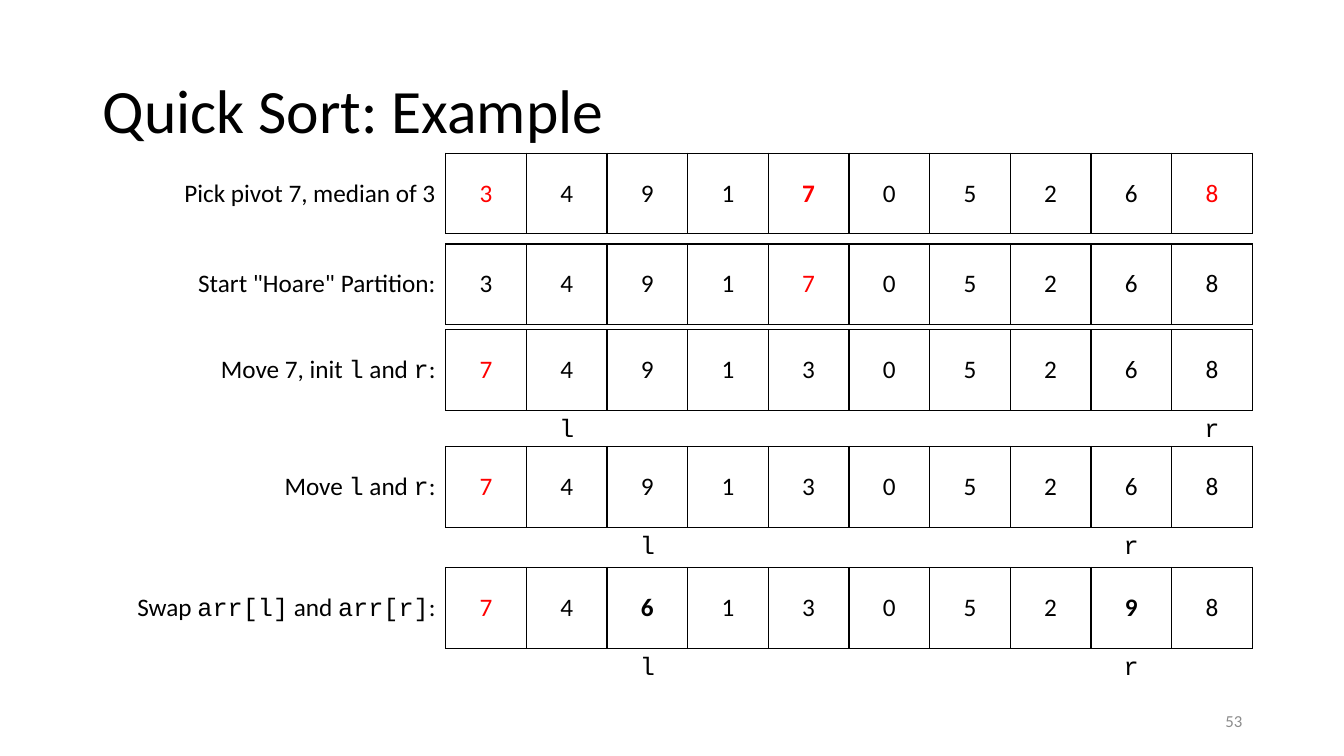
from lxml import etree
from pptx import Presentation
from pptx import util as u
from pptx.dml.color import RGBColor
from pptx.enum import text
from pptx.oxml.ns import qn

BLACK = RGBColor(0, 0, 0)
RED = RGBColor(0xFF, 0, 0)
GRAY = RGBColor(0x8C, 0x8C, 0x8C)
BODY, CODE = "Calibri", "Courier New"

CELL = 0.8
MARKER_HEIGHT = CELL / 2
RIGHT_EDGE = 12.42

# Top, label width, label (code in backticks), values, red and bold columns, markers
STEPS = [
    (1.52, 3, "Pick pivot 7, median of 3", "3491705268", {0, 4, 9}, {4}, {}),
    (2.42, 3, 'Start "Hoare" Partition:', "3491705268", {4}, set(), {}),
    (3.27, 3, "Move 7, init `l` and `r`:", "7491305268", {0}, set(), {1: "l", 9: "r"}),
    (4.43, 3, "Move `l` and `r`:", "7491305268", {0}, set(), {2: "l", 8: "r"}),
    (5.63, 3.2, "Swap `arr[l]` and `arr[r]`:", "7461305298", {0}, {2, 8}, {2: "l", 8: "r"}),
]


def style_cell(cell, black_sides):
    """Draw the named sides (L, R, T, B) in black and clear the others and the fill."""
    properties = cell._tc.get_or_add_tcPr()
    for side in "LRTB":
        line = etree.SubElement(properties, qn(f"a:ln{side}"), w=str(u.Pt(1)))
        if side in black_sides:
            fill = etree.SubElement(line, qn("a:solidFill"))
            etree.SubElement(fill, qn("a:srgbClr"), val=str(BLACK))
        else:
            etree.SubElement(line, qn("a:noFill"))
    cell.fill.background()
    cell.vertical_anchor = text.MSO_ANCHOR.MIDDLE


def write(paragraph, content, alignment, size=18, color=BLACK, bold=False, font=BODY):
    """Fill a paragraph, setting the parts between backticks in the code font."""
    paragraph.alignment = alignment
    paragraph.font.size = u.Pt(size)
    for index, part in enumerate(content.split("`")):
        run = paragraph.add_run()
        run.text = part
        run.font.name = CODE if index % 2 else font
        run.font.size = u.Pt(size)
        run.font.color.rgb = color
        run.font.bold = bold


presentation = Presentation()
presentation.slide_width, presentation.slide_height = u.Inches(13.33), u.Inches(7.5)
slide = presentation.slides.add_slide(presentation.slide_layouts[5])

# Title
title = slide.shapes.title
title.left, title.top = u.Inches(0.92), u.Inches(0.4)
title.width, title.height = u.Inches(11.5), u.Inches(1.45)
title.text_frame.vertical_anchor = text.MSO_ANCHOR.MIDDLE
title.text_frame.paragraphs[0].line_spacing = 0.9
write(title.text_frame.paragraphs[0], "Quick Sort: Example", text.PP_ALIGN.LEFT, size=44)

# One array table per step, with a marker row beneath the values
for top, label_width, label, values, red, bold, markers in STEPS:
    width = label_width + CELL * len(values)
    frame = slide.shapes.add_table(
        2, len(values) + 1, u.Inches(RIGHT_EDGE - width), u.Inches(top),
        u.Inches(width), u.Inches(CELL + MARKER_HEIGHT))
    table = frame.table
    table.first_row = table.horz_banding = False
    table.rows[0].height = u.Inches(CELL)
    table.rows[1].height = u.Inches(MARKER_HEIGHT)
    table.columns[0].width = u.Inches(label_width)

    label_cell = table.cell(0, 0)
    style_cell(label_cell, "R")
    style_cell(table.cell(1, 0), "")
    write(label_cell.text_frame.paragraphs[0], label, text.PP_ALIGN.RIGHT)

    for index, value in enumerate(values):
        table.columns[index + 1].width = u.Inches(CELL)
        value_cell, marker_cell = table.cell(0, index + 1), table.cell(1, index + 1)
        style_cell(value_cell, "LRTB")
        style_cell(marker_cell, "T")
        write(value_cell.text_frame.paragraphs[0], value, text.PP_ALIGN.CENTER,
              color=RED if index in red else BLACK, bold=index in bold)
        if index in markers:
            write(marker_cell.text_frame.paragraphs[0], markers[index],
                  text.PP_ALIGN.CENTER, font=CODE)

# Slide number
number = slide.shapes.add_textbox(
    u.Inches(RIGHT_EDGE - 3), u.Inches(6.95), u.Inches(3), u.Inches(0.4))
number.text_frame.word_wrap = True
number.text_frame.vertical_anchor = text.MSO_ANCHOR.MIDDLE
write(number.text_frame.paragraphs[0], "53", text.PP_ALIGN.RIGHT, size=12, color=GRAY)

presentation.save("out.pptx")
